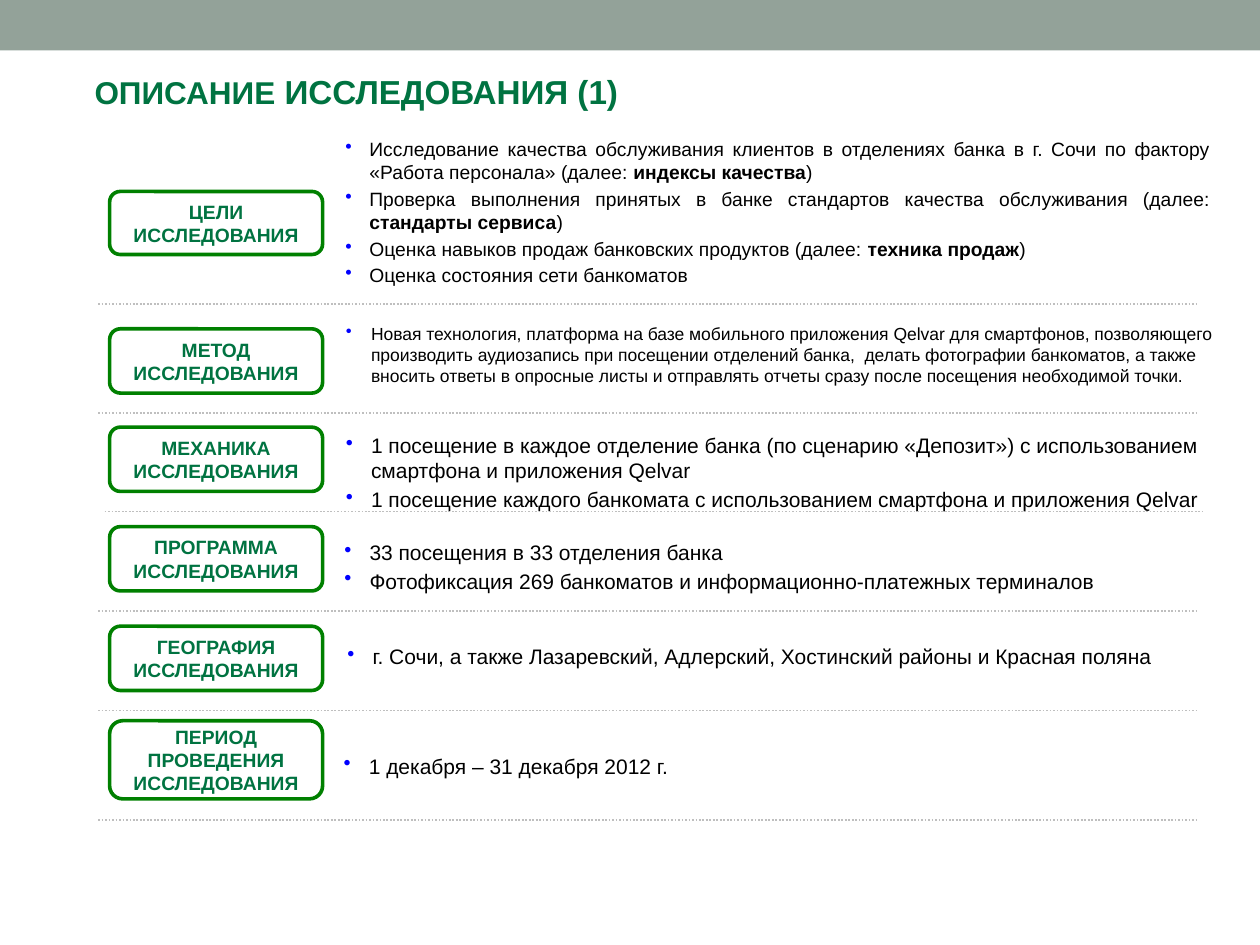
from dataclasses import dataclass

from lxml import etree
from pptx import Presentation
from pptx.dml.color import RGBColor
from pptx.enum.dml import MSO_LINE
from pptx.enum.shapes import MSO_CONNECTOR, MSO_SHAPE
from pptx.enum.text import MSO_ANCHOR, MSO_AUTO_SIZE, PP_ALIGN
from pptx.oxml.ns import qn
from pptx.util import Inches, Pt

RECT, ROUND = MSO_SHAPE.RECTANGLE, MSO_SHAPE.ROUNDED_RECTANGLE
LEFT, CENTER, JUSTIFY = PP_ALIGN.LEFT, PP_ALIGN.CENTER, PP_ALIGN.JUSTIFY
TOP, MIDDLE = MSO_ANCHOR.TOP, MSO_ANCHOR.MIDDLE
STRAIGHT, DOTTED = MSO_CONNECTOR.STRAIGHT, MSO_LINE.ROUND_DOT
NO_AUTOFIT = MSO_AUTO_SIZE.NONE


@dataclass(frozen=True)
class Theme:
    font: str = "Arial"
    band: RGBColor = RGBColor(0x93, 0xA2, 0x99)
    heading: RGBColor = RGBColor(0x00, 0x73, 0x41)
    outline: RGBColor = RGBColor(0x00, 0x80, 0x00)
    bullet: str = "0000FF"
    text: RGBColor = RGBColor(0, 0, 0)
    rule: RGBColor = RGBColor(0xBF, 0xBF, 0xBF)
    white: RGBColor = RGBColor(0xFF, 0xFF, 0xFF)
    title_size: int = 18
    title_large: int = 19
    label_size: int = 11


THEME = Theme()


@dataclass
class Row:
    """One section; offsets are inches from the top left of its box."""
    label: str
    items: list
    bottom: float
    label_dy: float
    list_dy: float
    list_h: float
    size: int = 12
    align: int = LEFT
    label_h: float = 0.51
    list_dx: float = 1.89
    list_w: float = 7.07
    rule_dx: float = 0


# Asterisks enclose bold words
ROWS = [
    Row("ЦЕЛИ ИССЛЕДОВАНИЯ",
        ["Исследование качества обслуживания клиентов в отделениях банка в г. Сочи "
         "по фактору «Работа персонала» (далее: *индексы качества*)",
         "Проверка выполнения принятых в банке стандартов качества обслуживания "
         "(далее: *стандарты сервиса*)",
         "Оценка навыков продаж банковских продуктов (далее: *техника продаж*)",
         "Оценка состояния сети банкоматов"],
        2.41, 0.55, 0.02, 1.26, size=11, align=JUSTIFY, label_h=0.5, list_dx=1.86),
    Row("МЕТОД ИССЛЕДОВАНИЯ",
        ["Новая технология, платформа на базе мобильного приложения Qelvar для "
         "смартфонов, позволяющего производить аудиозапись при посещении отделений "
         "банка,  делать фотографии банкоматов, а также вносить ответы в опросные "
         "листы и отправлять отчеты сразу после посещения необходимой точки."],
        3.28, 0.2, 0.08, 0.71, size=10, list_w=7.13),
    Row("МЕХАНИКА ИССЛЕДОВАНИЯ",
        ["1 посещение в каждое отделение банка (по сценарию «Депозит») "
         "с использованием смартфона и приложения Qelvar",
         "1 посещение каждого банкомата с использованием смартфона и приложения Qelvar"],
        4.06, 0.11, 0.08, 0.71, rule_dx=0.05),
    Row("ПРОГРАММА ИССЛЕДОВАНИЯ",
        ["33 посещения в 33 отделения банка",
         "Фотофиксация 269 банкоматов и информационно-платежных терминалов"],
        4.85, 0.12, 0.16, 0.47),
    Row("ГЕОГРАФИЯ ИССЛЕДОВАНИЯ",
        ["г. Сочи, а также Лазаревский, Адлерский, Хостинский районы и Красная поляна"],
        5.64, 0.12, 0.2, 0.35, list_dx=1.92),
    Row("ПЕРИОД ПРОВЕДЕНИЯ ИССЛЕДОВАНИЯ",
        ["1 декабря – 31 декабря 2012 г."],
        6.51, 0.08, 0.28, 0.35, label_h=0.62),
]


def style_run(r, size, color, bold=False):
    r.font.name, r.font.size, r.font.bold = THEME.font, Pt(size), bold
    r.font.color.rgb = color


def set_frame(tf, anchor, inset):
    tf.word_wrap, tf.auto_size, tf.vertical_anchor = True, NO_AUTOFIT, anchor
    tf.margin_left = tf.margin_right = tf.margin_top = tf.margin_bottom = Inches(inset)


def add_box(s, kind, x, y, w, h, fill=None, line=None):
    sp = s.shapes.add_shape(kind, Inches(x), Inches(y), Inches(w), Inches(h))
    sp.shadow.inherit = False
    for paint, color in ((sp.fill, fill), (sp.line.fill, line)):
        if color is None:
            paint.background()
        else:
            paint.solid()
            paint.fore_color.rgb = color
    return sp


def add_bullet(p, indent):
    pPr = p._p.get_or_add_pPr()
    pPr.set("marL", str(Inches(indent)))
    pPr.set("indent", str(-Inches(indent)))
    color = etree.SubElement(pPr, qn("a:buClr"))
    etree.SubElement(color, qn("a:srgbClr")).set("val", THEME.bullet)
    etree.SubElement(pPr, qn("a:buChar")).set("char", "•")


def add_title(s, x, y, w, h):
    sp = s.shapes.title
    sp.left, sp.top, sp.width, sp.height = (Inches(v) for v in (x, y, w, h))
    set_frame(sp.text_frame, MIDDLE, 0)
    p = sp.text_frame.paragraphs[0]
    p.alignment, p.line_spacing = LEFT, 0.9
    for text, size in (("ОПИСАНИЕ", THEME.title_size),
                       (" ИССЛЕДОВАНИЯ (1)", THEME.title_large)):
        r = p.add_run()
        r.text = text
        style_run(r, size, THEME.heading, True)


def add_label(s, text, x, y, w, h):
    sp = add_box(s, ROUND, x, y, w, h, THEME.white, THEME.outline)
    sp.line.width = Pt(2.08)
    tf = sp.text_frame
    set_frame(tf, MIDDLE, 0.04)
    tf.text = text
    p = tf.paragraphs[0]
    p.alignment = CENTER
    style_run(p.runs[0], THEME.label_size, THEME.heading, True)


def add_list(s, row, x, y, w, h):
    tf = add_box(s, ROUND, x, y, w, h).text_frame
    set_frame(tf, TOP, 0.04)
    for i, item in enumerate(row.items):
        p = tf.add_paragraph() if i else tf.paragraphs[0]
        p.alignment, p.space_before = row.align, Pt(2)
        add_bullet(p, 0.19 if row.align == JUSTIFY else 0.2)
        for j, part in enumerate(item.split("*")):
            r = p.add_run()
            r.text = part
            style_run(r, row.size, THEME.text, j % 2 == 1)


def add_rule(s, x, y, w):
    line = s.shapes.add_connector(STRAIGHT, Inches(x), Inches(y), Inches(x + w), Inches(y))
    line.line.color.rgb, line.line.width = THEME.rule, Pt(1)
    line.line.dash_style = DOTTED
    etree.SubElement(line._element.spPr, qn("a:effectLst"))


def add_row(s, row, x, y, w):
    add_list(s, row, x + row.list_dx, y + row.list_dy, row.list_w, row.list_h)
    add_label(s, row.label, x + 0.09, y + row.label_dy, 1.69, row.label_h)
    add_rule(s, x + row.rule_dx, row.bottom, w)


def main():
    prs = Presentation()
    prs.slide_width, prs.slide_height = Inches(10), Inches(7.5)
    s = prs.slides.add_slide(prs.slide_layouts[5])
    # Top band and title
    add_box(s, RECT, 0, 0, 10, 0.4, THEME.band)
    add_title(s, 0.75, 0.52, 6.13, 0.45)
    # Each section starts at the rule that closes the one above
    top = 0.97
    for row in ROWS:
        add_row(s, row, 0.78, top, 8.72)
        top = row.bottom
    prs.save("out.pptx")


if __name__ == "__main__":
    main()
